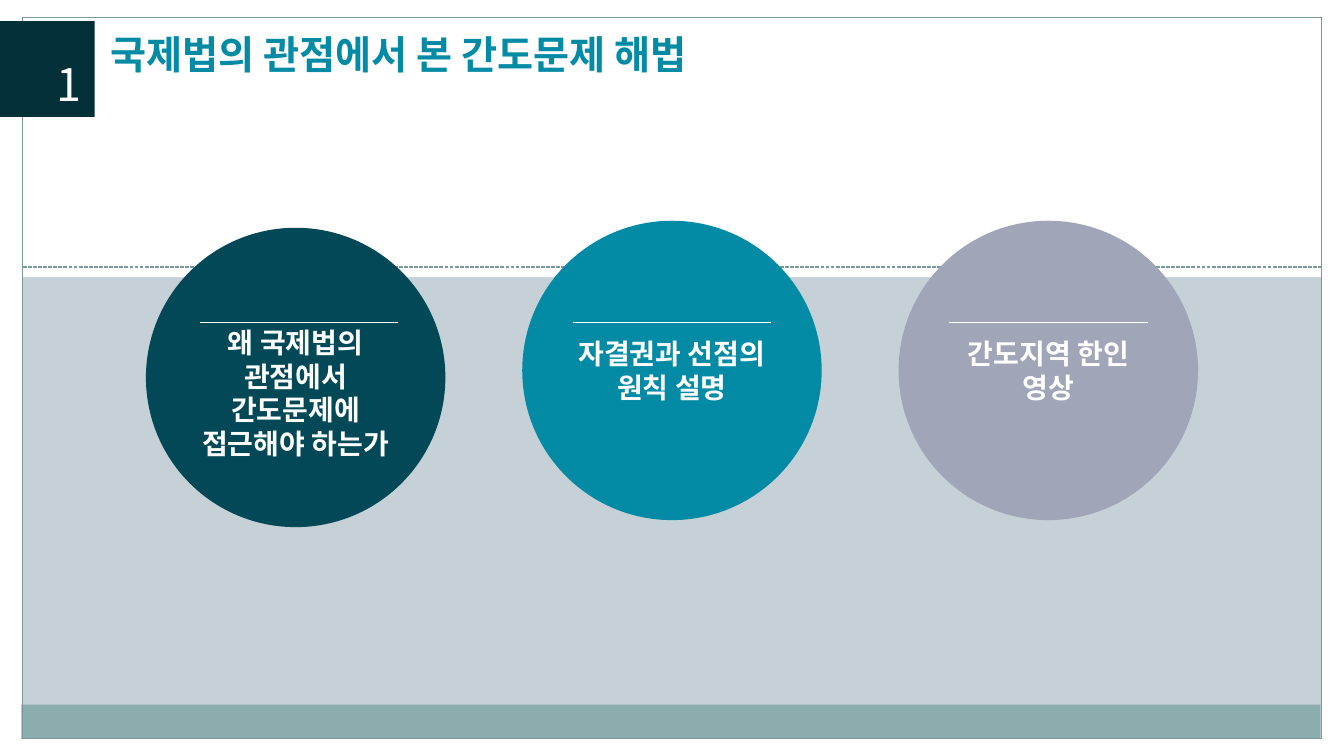
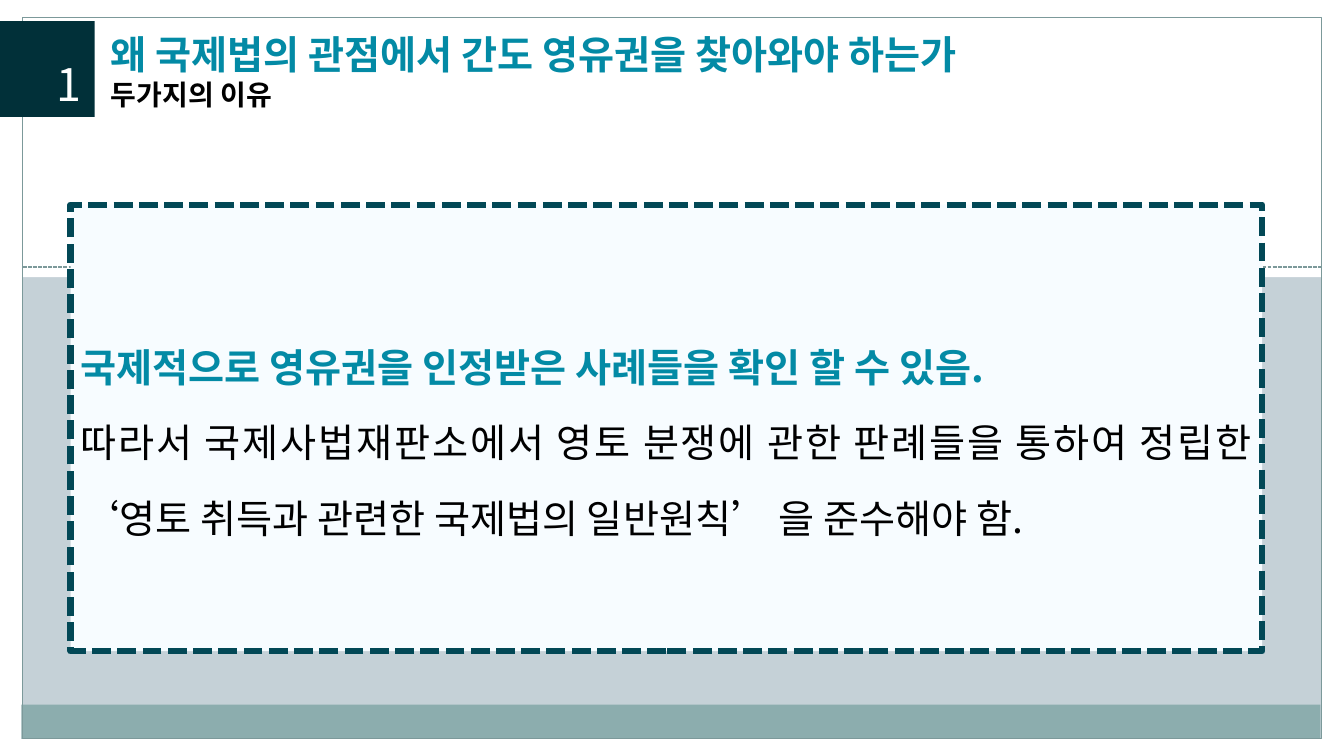
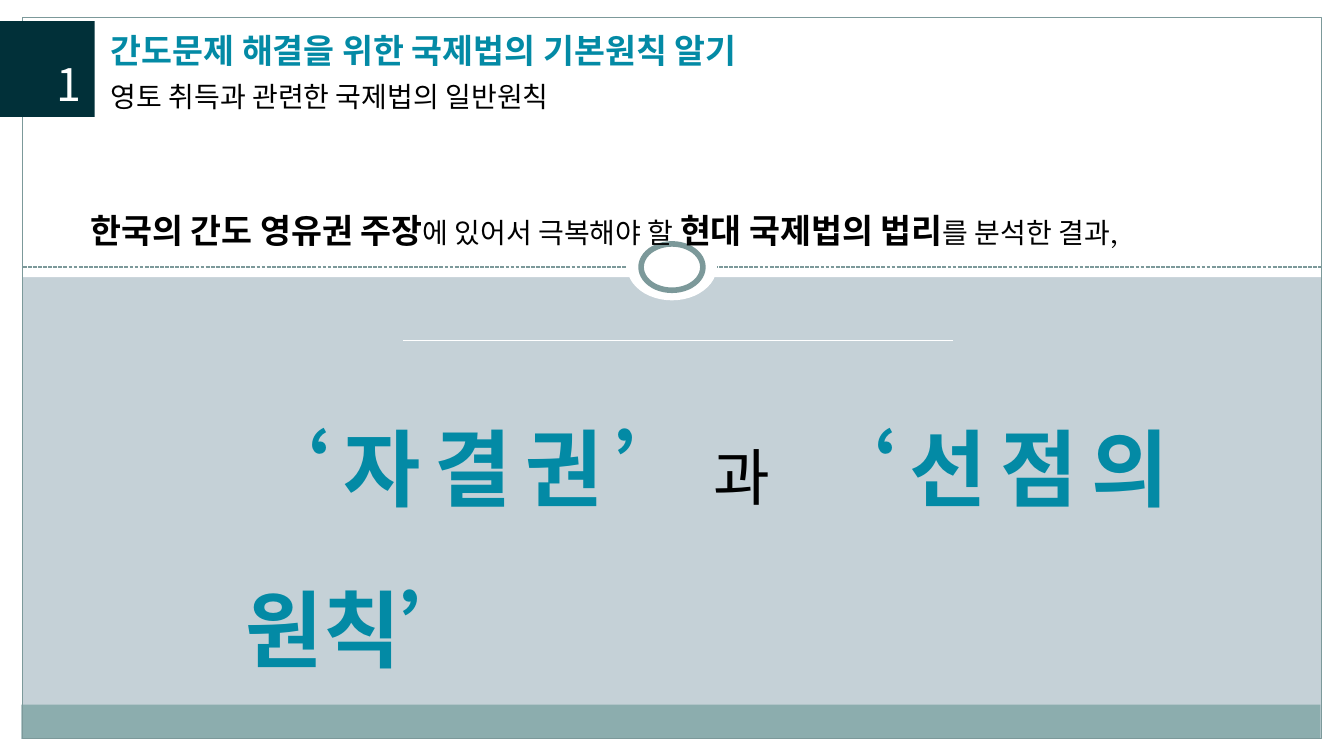
from pptx import Presentation
from pptx.dml.color import RGBColor
from pptx.enum.dml import MSO_LINE
from pptx.enum.shapes import MSO_CONNECTOR, MSO_SHAPE
from pptx.enum.text import MSO_ANCHOR, MSO_AUTO_SIZE, PP_ALIGN
from pptx.oxml.ns import qn
from pptx.util import Inches, Pt
from lxml import etree

RECT, OVAL, LINE = MSO_SHAPE.RECTANGLE, MSO_SHAPE.OVAL, MSO_CONNECTOR.STRAIGHT
DASH, MIDDLE, FIT = MSO_LINE.SQUARE_DOT, MSO_ANCHOR.MIDDLE, MSO_AUTO_SIZE.SHAPE_TO_FIT_TEXT
LEFT, CENTER, JUSTIFY = PP_ALIGN.LEFT, PP_ALIGN.CENTER, PP_ALIGN.JUSTIFY
SANS, SERIF = "Noto Sans CJK KR", "TeX Gyre Schola"
WHITE, BLACK, NIGHT, DEEP, TEAL = "FFFFFF", "000000", "013039", "024856", "038AA5"
MIST, SAGE, GREY, LILAC, ICE = "C5D1D7", "8CADAE", "7C999A", "A0A5B8", "F7FCFF"
rgb = RGBColor.from_string

deck = Presentation()
deck.slide_width, deck.slide_height = Inches(13.33), Inches(7.5)
# One column and one row are a hundredth of the slide
COL, ROW = deck.slide_width / 100, deck.slide_height / 100


def draw(slide, kind, box, fill=None, line=None, width=0.75, dash=None):
    """Draw a shape or a straight line; box is left, top, width, height."""
    x, y, w, h = (int(n * unit) for n, unit in zip(box, (COL, ROW, COL, ROW)))
    if kind is LINE:
        item = slide.shapes.add_connector(LINE, x, y, x + w, y + h)
        etree.SubElement(item._element.spPr, qn("a:effectLst"))
    else:
        item = slide.shapes.add_shape(kind, x, y, w, h)
        item.shadow.inherit = False
        if fill:
            item.fill.solid()
            item.fill.fore_color.rgb = rgb(fill)
        else:
            item.fill.background()
    if line:
        item.line.color.rgb = rgb(line)
        item.line.width = Pt(width)
        item.line.dash_style = dash
    else:
        item.line.fill.background()
    return item


def write(slide, place, paras, name=SANS, align=LEFT, wrap=False, space=None):
    """Fill a shape, or a new text box, with paragraphs of (text, size, colour, bold)."""
    if isinstance(place, tuple):
        x, y, w, h = (int(n * unit) for n, unit in zip(place, (COL, ROW, COL, ROW)))
        frame = slide.shapes.add_textbox(x, y, w, h).text_frame
        frame.auto_size = FIT
    else:
        frame = place.text_frame
        frame.vertical_anchor = MIDDLE
    frame.word_wrap = wrap
    for i, runs in enumerate(paras):
        para = frame.add_paragraph() if i else frame.paragraphs[0]
        para.alignment, para.line_spacing = align, space
        para.font.name = name
        for text, size, color, bold in runs:
            run = para.add_run()
            run.text = text
            font = para.font if len(runs) == 1 else run.font
            font.size, font.bold, font.color.rgb = Pt(size), bold, rgb(color)


# Shared backdrop, number tag and headings
heads = [
    ("국제법의 관점에서 본 간도문제 해법", 28, 49.9, None),
    ("왜 국제법의 관점에서 간도 영유권을 찾아와야 하는가", 28, 72.54,
     ("두가지의 이유", True, SANS, 9.6, 14.85)),
    ("간도문제 해결을 위한 국제법의 기본원칙 알기", 24, 53.94,
     ("영토 취득과 관련한 국제법의 일반원칙", False, SERIF, 9.87, 37.2)),
]
bands = [(0, 97.73, 100, 2.27), (98.35, 0, 1.65, 100), (0, 0, 1.65, 100), (0, 0, 100, 36.67)]
slides = []
for title, size, wide, sub in heads:
    slide = deck.slides.add_slide(deck.slide_layouts[6])
    slides.append(slide)
    slide.background.fill.solid()
    slide.background.fill.fore_color.rgb = rgb(MIST)
    for band in bands:
        draw(slide, RECT, band, WHITE)
    draw(slide, RECT, (1.6, 93.2, 96.65, 4.53), SAGE)
    draw(slide, LINE, (1.7, 35.33, 96.65, 0), None, GREY, 0.9, DASH)
    draw(slide, RECT, (1.65, 2.27, 96.65, 95.46), None, GREY)
    draw(slide, RECT, (0, 2.8, 7.05, 12.67), NIGHT)
    write(slide, (3.45, 6.8, 3.6, 8.53), [[("1", 32, WHITE, False)]])
    write(slide, (7.5, 3.33, wide, 7.6), [[(title, size, TEAL, True)]])
    if sub:
        text, bold, name, top, span = sub
        write(slide, (7.5, top, span, 5.87), [[(text, 20, BLACK, bold)]], name)
topics, reason, result = slides

# Slide 1: three topic circles, each with a thin rule
circles = [
    ("왜 국제법의 관점에서 간도문제에 접근해야 하는가", DEEP, 30.13, 0.35, 14.85),
    ("자결권과 선점의 원칙 설명", TEAL, 29.2, 0.05, 42.6),
    ("간도지역 한인 영상", LILAC, 29.2, 0.05, 70.6),
]
for i, (text, color, top, inset, start) in enumerate(circles):
    disc = draw(topics, OVAL, (10.86 + 28 * i, top, 22.28, 39.6), color)
    disc.text_frame.margin_top = Inches(inset)
    write(topics, disc, [[(text, 20, WHITE, True)]], SERIF, CENTER, True)
    draw(topics, LINE, (start, 42.67, 14.78, 0), None, WHITE)

# Slide 2: dashed panel with the reason
panel = draw(reason, RECT, (5.25, 27.07, 88.67, 59.07), ICE, DEEP, 4.5, DASH)
write(reason, panel, [
    [("국제적으로 영유권을 인정받은 사례들을 확인 할 수 있음.", 28, TEAL, True)],
    [("따라서 국제사법재판소에서 영토 분쟁에 관한 판례들을 통하여 정립한 "
      "‘영토 취득과 관련한 국제법의 일반원칙’ 을 준수해야 함.", 28, BLACK, False)],
], SANS, JUSTIFY, True, 1.6)

# Slide 3: ring on the divider, lead sentence and the two principles
draw(result, OVAL, (46.66, 30.8, 6.68, 8.93), WHITE)
draw(result, OVAL, (47.7, 32.27, 4.6, 6.13), WHITE, GREY, 4)
write(result, (6, 23.87, 88.9, 8.8), [[
    ("한국의 간도 영유권 주장", 24, BLACK, True),
    ("에 있어서 극복해야 할 ", 20, BLACK, False),
    ("현대 국제법의 법리", 24, BLACK, True),
    ("를 분석한 결과,", 20, BLACK, False),
]], SERIF, JUSTIFY, True, 1.6)
write(result, (17.55, 46.4, 70.14, 20.4), [[
    ("‘자결권’", 60, TEAL, True),
    ("과 ", 44, BLACK, False),
    ("‘선점의 원칙’", 60, TEAL, True),
]], SANS, JUSTIFY, True, 1.6)
draw(result, LINE, (30, 45.07, 40.9, 0), None, WHITE)

deck.save("out.pptx")
